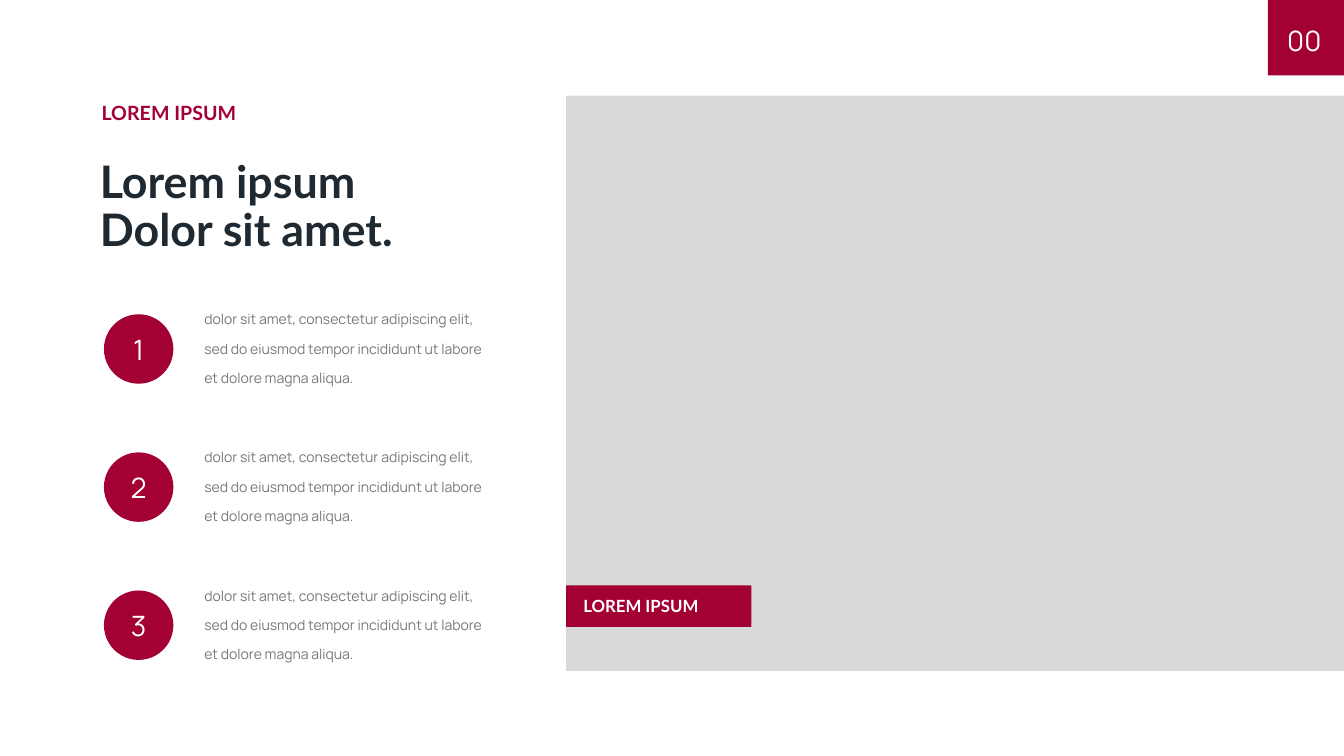
"""Builds a slide with a headline, three numbered points and a captioned panel."""
from dataclasses import dataclass

from lxml import etree
from pptx import Presentation
from pptx import util as u
from pptx.dml.color import RGBColor
from pptx.enum import shapes, text
from pptx.oxml import ns

CRIMSON = RGBColor(0xA3, 0x01, 0x34)
NAVY = RGBColor(0x1F, 0x29, 0x32)
GRAY = RGBColor(0x78, 0x78, 0x78)
LIGHT = RGBColor(0xD9, 0xD9, 0xD9)
WHITE = RGBColor(0xFF, 0xFF, 0xFF)

HEADING_FONT, BODY_FONT = "Lato", "Manrope"
LABEL = "LOREM IPSUM"
DESCRIPTION = ("dolor sit amet, consectetur adipiscing elit, sed do eiusmod "
               "tempor incididunt ut labore et dolore magna aliqua.")
FIRST_POINT_TOP, POINT_PITCH = 7.39, 3.48


@dataclass(frozen=True)
class Box:
    left: float
    top: float
    width: float
    height: float

    def lengths(self) -> tuple:
        return tuple(u.Cm(side) for side in (self.left, self.top, self.width, self.height))


@dataclass(frozen=True)
class Point:
    number: int
    description: str

    @property
    def top(self) -> float:
        return FIRST_POINT_TOP + (self.number - 1) * POINT_PITCH


POINTS = [Point(number, DESCRIPTION) for number in (1, 2, 3)]


def write(holder, wording: str, *, size: float, color: RGBColor, font: str = BODY_FONT,
          bold: bool = False, align=text.PP_ALIGN.LEFT, anchor=text.MSO_ANCHOR.TOP,
          spacing: float = 1.0, inset: float | None = None) -> None:
    frame = holder.text_frame
    frame.text = wording
    frame.word_wrap = True
    frame.auto_size = text.MSO_AUTO_SIZE.NONE
    frame.vertical_anchor = anchor
    if inset is not None:
        frame.margin_left = frame.margin_right = u.Cm(inset)
        frame.margin_top = frame.margin_bottom = u.Cm(inset)
    for paragraph in frame.paragraphs:
        paragraph.alignment = align
        paragraph.line_spacing = spacing
        paragraph.space_before = u.Pt(0)
        for run in paragraph.runs:
            run.font.name = font
            run.font.size = u.Pt(size)
            run.font.bold = bold
            run.font.color.rgb = color


def add_block(parts, kind, box: Box, fill: RGBColor):
    block = parts.add_shape(kind, *box.lengths())
    block.shadow.inherit = False
    block.fill.solid()
    block.fill.fore_color.rgb = fill
    block.line.fill.background()
    return block


def add_text(parts, box: Box, wording: str, **style) -> None:
    write(parts.add_textbox(*box.lengths()), wording, **style)


def place(holder, box: Box) -> None:
    holder.left, holder.top, holder.width, holder.height = box.lengths()


def remove_bullet(holder) -> None:
    properties = holder.text_frame.paragraphs[0]._p.get_or_add_pPr()
    properties.set("marL", "0")
    properties.set("indent", "0")
    etree.SubElement(properties, ns.qn("a:buNone"))


def add_point(parts, point: Point) -> None:
    group = parts.add_group_shape().shapes
    add_text(group, Box(4.9, point.top, 7.65, 2.41), point.description,
             size=10, color=GRAY, spacing=1.75)
    circle = add_block(group, shapes.MSO_SHAPE.OVAL,
                       Box(2.62, point.top + 0.53, 1.75, 1.75), CRIMSON)
    write(circle, str(point.number), size=20, color=WHITE,
          align=text.PP_ALIGN.CENTER, anchor=text.MSO_ANCHOR.MIDDLE)


def main() -> None:
    deck = Presentation()
    deck.slide_width, deck.slide_height = u.Cm(33.87), u.Cm(19.05)
    slide = deck.slides.add_slide(deck.slide_layouts[1])
    parts = slide.shapes
    headline, page_number = slide.placeholders
    rectangle = shapes.MSO_SHAPE.RECTANGLE

    add_block(parts, rectangle, Box(14.27, 2.41, 19.6, 14.5), LIGHT)
    corner = add_block(parts, rectangle, Box(31.95, 0, 1.92, 1.9), CRIMSON)

    place(page_number, Box(31.9, 0.15, 1.4, 1.75))
    write(page_number, "00", size=20, color=WHITE, align=text.PP_ALIGN.RIGHT,
          anchor=text.MSO_ANCHOR.MIDDLE, inset=0)
    remove_bullet(page_number)
    corner._element.addnext(page_number._element)

    place(headline, Box(2.26, 3.89, 10.31, 2.74))
    write(headline, "Lorem ipsum\nDolor sit amet.", size=32, color=NAVY,
          font=HEADING_FONT, bold=True, spacing=0.9)
    add_text(parts, Box(2.31, 2.41, 10.26, 0.86), LABEL, size=14, color=CRIMSON,
             font=HEADING_FONT, bold=True)

    for point in POINTS:
        add_point(parts, point)

    add_block(parts, rectangle, Box(14.27, 14.75, 4.67, 1.05), CRIMSON)
    add_text(parts, Box(14.45, 14.88, 4.09, 0.76), LABEL, size=12, color=WHITE,
             font=HEADING_FONT, bold=True)

    deck.save("out.pptx")


if __name__ == "__main__":
    main()
